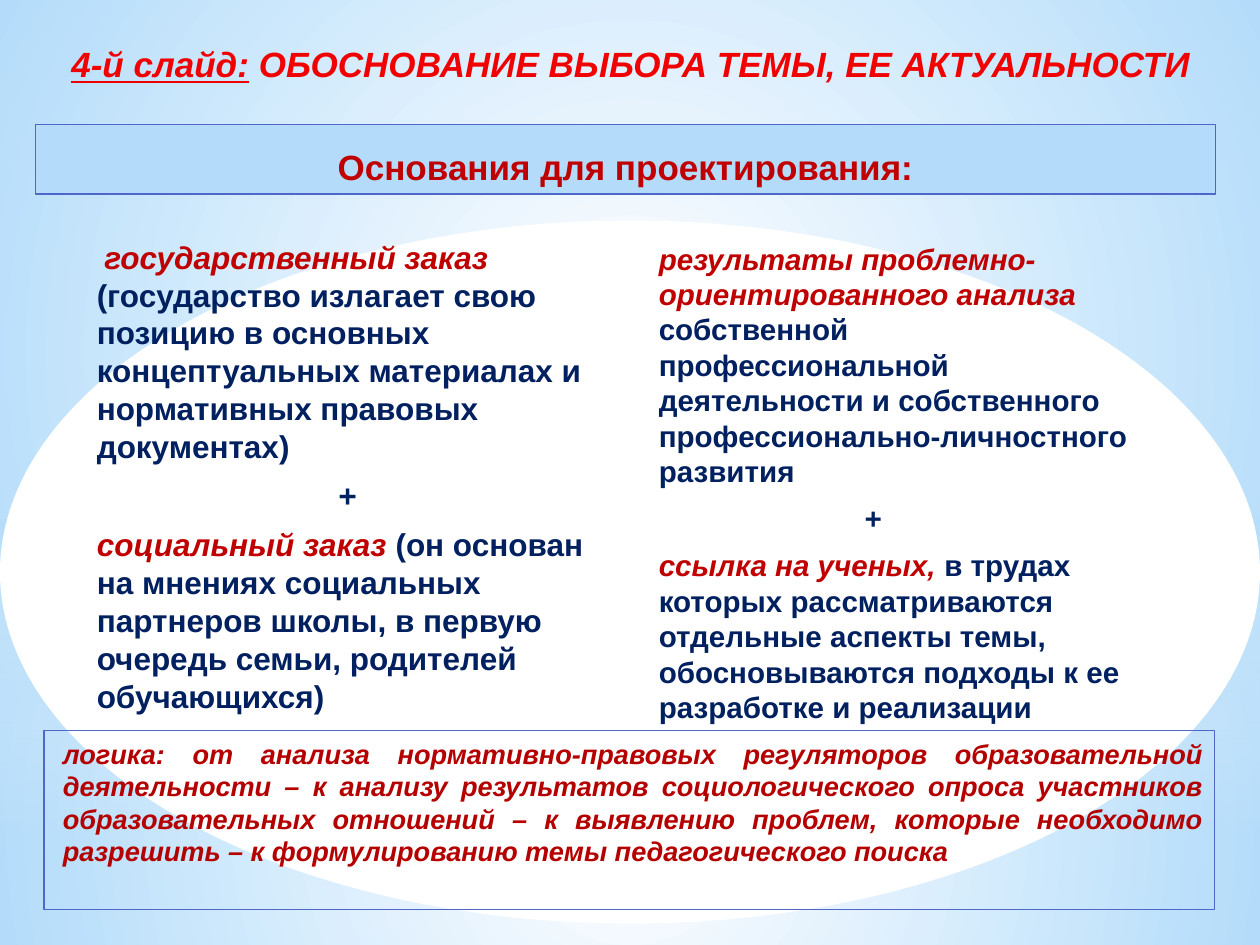
from lxml import etree
from pptx import Presentation
from pptx.dml.color import RGBColor
from pptx.enum.shapes import MSO_SHAPE
from pptx.enum.text import MSO_ANCHOR, PP_ALIGN
from pptx.oxml.ns import qn
from pptx.util import Inches, Pt

RECTANGLE, OVAL = MSO_SHAPE.RECTANGLE, MSO_SHAPE.OVAL
TOP, BOTTOM = MSO_ANCHOR.TOP, MSO_ANCHOR.BOTTOM
LEFT, CENTER, JUSTIFY = PP_ALIGN.LEFT, PP_ALIGN.CENTER, PP_ALIGN.JUSTIFY

WHITE = RGBColor(0xFF, 0xFF, 0xFF)
SKY = RGBColor(0xB4, 0xDC, 0xFA)
BORDER = RGBColor(0x4E, 0x67, 0xC8)
RED = RGBColor(0xC0, 0x00, 0x00)
DARK_RED = RGBColor(0xB5, 0x00, 0x00)
BRIGHT_RED = RGBColor(0xF1, 0x00, 0x00)
NAVY = RGBColor(0x00, 0x20, 0x60)


def add_shape(page, kind, box, fill=None, line=None):
    shape = page.shapes.add_shape(kind, *map(Inches, box))
    shape.shadow.inherit = False
    if fill is None:
        shape.fill.background()
    else:
        shape.fill.solid()
        shape.fill.fore_color.rgb = fill
    if line is None:
        shape.line.fill.background()
    else:
        shape.line.color.rgb = line
        shape.line.width = Pt(0.75)
    return shape


def set_gradient(shape, stops, radial):
    """Fill with (percent, colour, opacity) stops, from the centre or downwards."""
    gradient = etree.Element(qn("a:gradFill"), rotWithShape="1")
    stop_list = etree.SubElement(gradient, qn("a:gsLst"))
    for position, color, opacity in stops:
        stop = etree.SubElement(stop_list, qn("a:gs"), pos=str(position * 1000))
        tone = etree.SubElement(stop, qn("a:srgbClr"), val=str(color))
        if opacity < 100:
            etree.SubElement(tone, qn("a:alpha"), val=str(opacity * 1000))
    if radial:
        direction = etree.SubElement(gradient, qn("a:path"), path="circle")
        edges = dict.fromkeys("ltrb", "50000")
        etree.SubElement(direction, qn("a:fillToRect"), **edges)
    else:
        etree.SubElement(gradient, qn("a:lin"), ang="5400000", scaled="0")
    properties = shape.element.spPr
    properties.replace(properties.find(qn("a:solidFill")), gradient)


def add_text_box(page, box):
    return page.shapes.add_textbox(*map(Inches, box))


def prepare_frame(shape, anchor=TOP):
    frame = shape.text_frame
    frame.word_wrap = True
    frame.vertical_anchor = anchor
    return frame


def add_para(frame, first=False, align=LEFT, before=3.6, after=3,
             margin=0.0, indent=0.0):
    para = frame.paragraphs[0] if first else frame.add_paragraph()
    para.alignment = align
    para.space_before, para.space_after = Pt(before), Pt(after)
    para.line_spacing = 1.0
    properties = para._p.get_or_add_pPr()
    properties.set("marL", str(Inches(margin)))
    properties.set("indent", str(Inches(indent)))
    return para


def add_span(para, text, size, color, italic=False, underline=False):
    span = para.add_run()
    span.text = text
    font = span.font
    font.name, font.size, font.bold = "Arial", Pt(size), True
    font.italic, font.underline = italic, underline
    font.color.rgb = color


def draw_background(page, box):
    left, top, width, height = box
    split = 5.58
    glow = [(0, WHITE, 100), (100, SKY, 100)]
    for offset, depth in ((split, height - split), (0, split)):
        panel = add_shape(page, RECTANGLE, (left, top + offset, width, depth), SKY)
        set_gradient(panel, glow, radial=True)
    haze = add_shape(page, RECTANGLE, (left, top + 4.12, width, 2.5), SKY)
    set_gradient(haze, [(0, SKY, 60), (100, WHITE, 0)], radial=False)
    add_shape(page, OVAL, (left, top + 1.75, width, split), WHITE)


def draw_title(page, box):
    frame = prepare_frame(add_text_box(page, box))
    para = add_para(frame, True, CENTER, before=0, after=0)
    add_span(para, "4-й слайд:", 20, BRIGHT_RED, italic=True, underline=True)
    add_span(para, " ОБОСНОВАНИЕ ВЫБОРА ТЕМЫ, ЕЕ АКТУАЛЬНОСТИ", 20, BRIGHT_RED, italic=True)


def draw_heading(page, box):
    frame = prepare_frame(add_shape(page, RECTANGLE, box, SKY, BORDER), BOTTOM)
    para = add_para(frame, True, CENTER, before=4)
    add_span(para, "Основания для проектирования:", 20, RED)


def draw_column(page, box, size, reasons, anchor, margin, first_indent, plus):
    """Two reasons, each a red term with an explanation, joined by a plus sign."""
    frame = prepare_frame(add_text_box(page, box), anchor)
    for number, (term, explanation) in enumerate(reasons):
        if number:
            add_span(add_para(frame, **plus), "+ ", size, NAVY, italic=True)
        para = add_para(frame, number == 0, margin=margin,
                        indent=0 if number else first_indent)
        add_span(para, term + " ", size, RED, italic=True)
        add_span(para, explanation, size, NAVY)


def draw_logic(page, box):
    frame = prepare_frame(add_shape(page, RECTANGLE, box, line=BORDER))
    para = add_para(frame, True, JUSTIFY, margin=0.05)
    add_span(para, "логика: от анализа нормативно-правовых регуляторов образовательной "
             "деятельности – к анализу результатов социологического опроса участников "
             "образовательных отношений – к выявлению проблем, которые необходимо "
             "разрешить – к формулированию темы педагогического поиска",
             15.5, DARK_RED, italic=True)


ORDERS = [
    ("государственный заказ",
     "(государство излагает свою позицию в основных концептуальных материалах "
     "и нормативных правовых документах)"),
    ("социальный заказ",
     "(он основан на мнениях социальных партнеров школы, в первую очередь семьи, "
     "родителей обучающихся)"),
]
ANALYSIS = [
    ("результаты проблемно-ориентированного анализа",
     "собственной профессиональной деятельности и собственного "
     "профессионально-личностного развития"),
    ("ссылка на ученых,",
     "в трудах которых рассматриваются отдельные аспекты темы, обосновываются "
     "подходы к ее разработке и реализации"),
]


def main():
    deck = Presentation()
    deck.slide_width, deck.slide_height = Inches(10), Inches(7.5)
    page = deck.slides.add_slide(deck.slide_layouts[6])
    draw_background(page, (0, 0, 10, 7.5))
    draw_column(page, (0.67, 1.86, 4.24, 3.86), 18, ORDERS, BOTTOM,
                margin=0, first_indent=0.06, plus={"align": CENTER})
    draw_logic(page, (0.35, 5.8, 9.29, 1.42))
    draw_heading(page, (0.28, 0.99, 9.37, 0.55))
    draw_column(page, (5.08, 1.86, 4.09, 3.86), 16.9, ANALYSIS, TOP,
                margin=0.05, first_indent=0, plus={"margin": 1.68})
    draw_title(page, (0.28, 0.29, 9.45, 0.55))
    deck.save("out.pptx")


if __name__ == "__main__":
    main()
